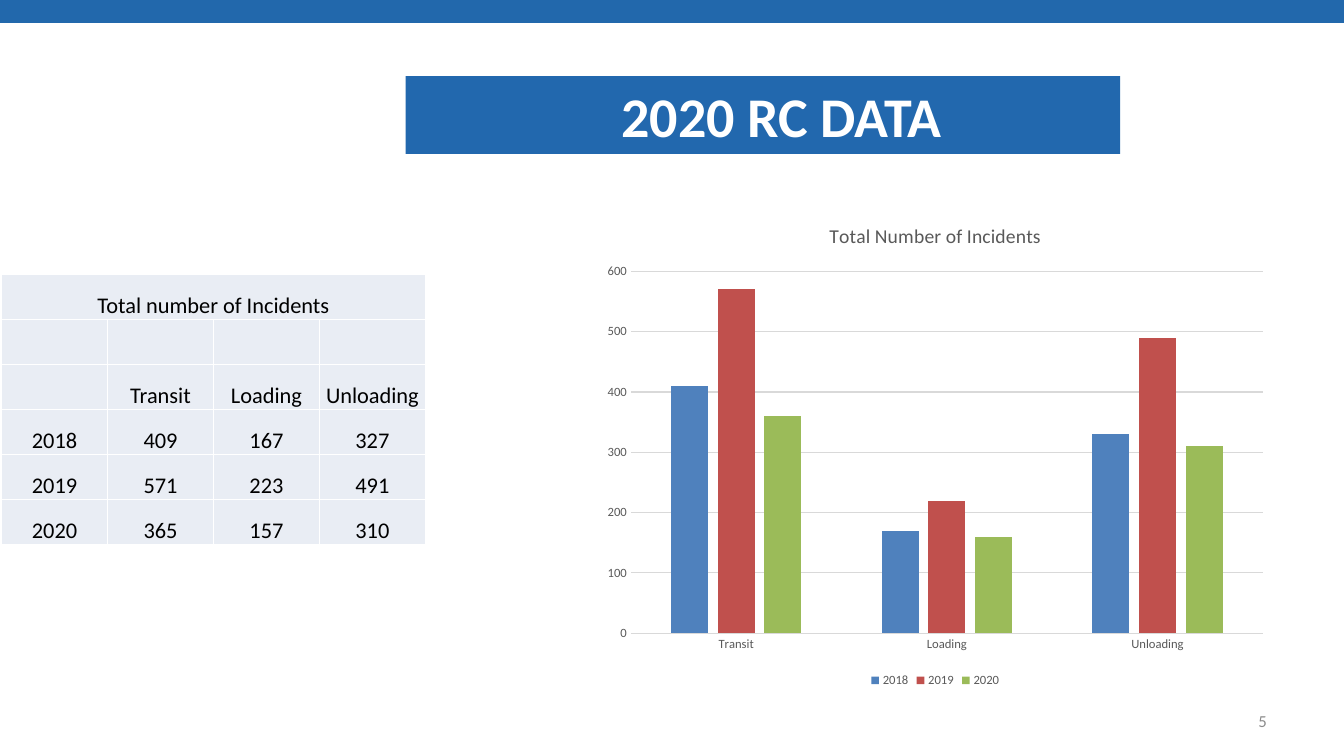
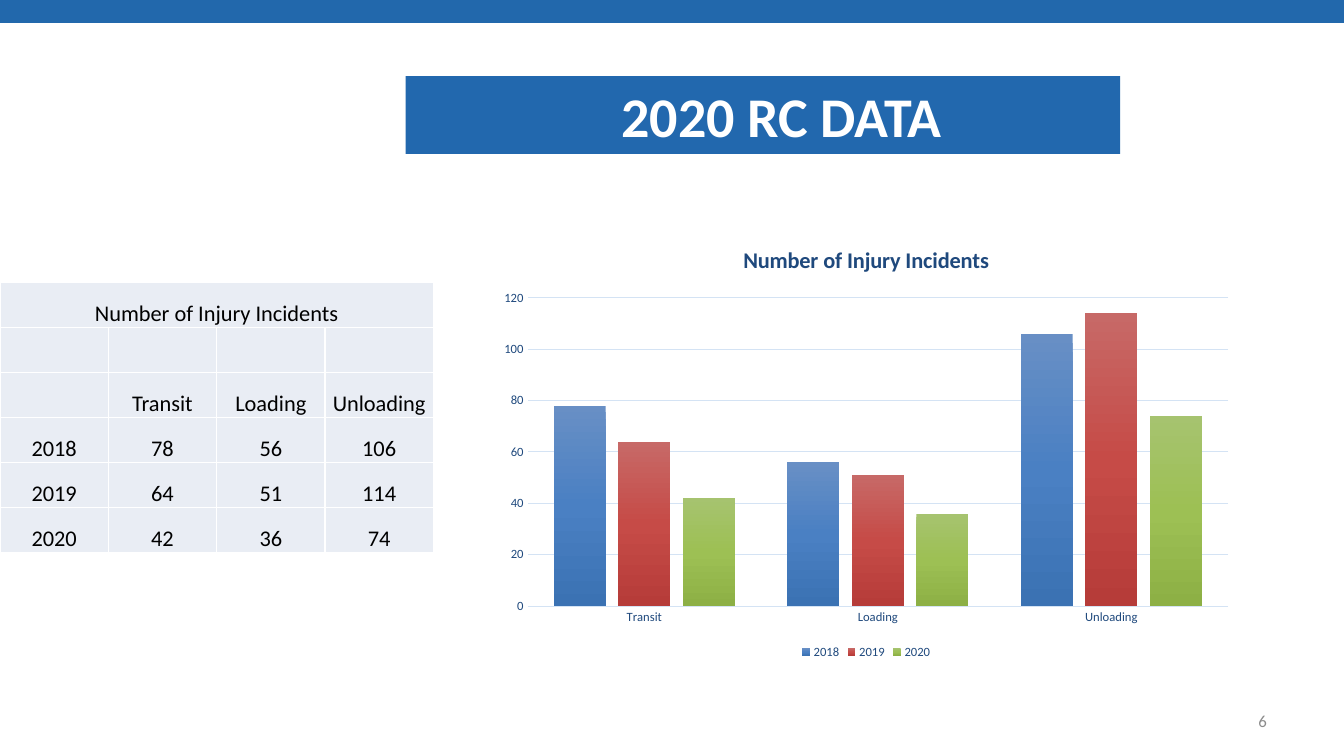
"""Build the two 2020 RC incident slides, each with a table and a column chart."""
from copy import deepcopy
from dataclasses import dataclass
from typing import Any

from lxml.etree import SubElement
from pptx import Presentation
from pptx.chart.data import CategoryChartData
from pptx.chart.series import BarSeries
from pptx.dml.color import RGBColor
from pptx.enum.chart import XL_CHART_TYPE, XL_LEGEND_POSITION, XL_TICK_MARK
from pptx.enum.shapes import MSO_SHAPE
from pptx.enum.text import MSO_ANCHOR, PP_ALIGN
from pptx.oxml.ns import qn
from pptx.slide import Slide
from pptx.table import _Cell
from pptx.text.text import Font, TextFrame
from pptx.util import Cm, Pt


@dataclass(frozen=True)
class Theme:
    font: str = "Calibri"
    band: str = "2268AC"
    title_fill: str = "2268AE"
    white: str = "FFFFFF"
    black: str = "000000"
    cell: str = "E9EDF4"
    number: str = "8C8C8C"
    title_size: int = 40
    table_size: int = 16
    number_size: int = 12
    axis_size: int = 9


@dataclass(frozen=True)
class Box:
    left: float
    top: float
    width: float
    height: float

    def emu(self) -> tuple[int, int, int, int]:
        return Cm(self.left), Cm(self.top), Cm(self.width), Cm(self.height)


@dataclass(frozen=True)
class ChartStyle:
    text: str
    grid: str
    title_size: int
    title_bold: bool
    gap: int
    overlap: int
    maximum: int
    unit: int
    digits: int
    fills: tuple[tuple[str, ...], ...]


@dataclass(frozen=True)
class Page:
    number: int
    table_title: str
    chart_title: str
    values: dict[str, tuple[int, ...]]
    table_box: Box
    chart_box: Box
    style: ChartStyle


THEME = Theme()
SLIDE = Box(0, 0, 33.87, 19.05)
BAND = Box(0, 0, SLIDE.width, 0.58)
HEADER = Box(0, 0.69, SLIDE.width, 3.33)
TITLE = Box(10.22, 1.92, 18.01, 1.96)
NUMBER = Box(24.28, 17.65, 7.9, 1.02)
STAGES = ("Transit", "Loading", "Unloading")

PAGES = (
    Page(
        5, "Total number of Incidents", "Total Number of Incidents",
        {"2018": (409, 167, 327), "2019": (571, 223, 491), "2020": (365, 157, 310)},
        Box(0.04, 6.92, 10.68, 6.81), Box(14.97, 5.12, 17.2, 12.31),
        ChartStyle("595959", "D9D9D9", 14, False, 219, -27, 600, 100, -1,
                   (("4F81BD",), ("C0504D",), ("9BBB59",))),
    ),
    Page(
        6, "Number of Injury Incidents", "Number of Injury Incidents",
        {"2018": (78, 56, 106), "2019": (64, 51, 114), "2020": (42, 36, 74)},
        Box(0, 7.12, 10.92, 6.81), Box(12.33, 5.72, 19, 11),
        ChartStyle("1F497D", "D4E3F4", 16, True, 100, -24, 120, 20, 0,
                   (("688FC5", "4A80C3", "3B72B3"),
                    ("C76967", "C64B47", "B63C39"),
                    ("A6C36F", "9DC054", "8DB045"))),
    ),
)


def rgb(color: str) -> RGBColor:
    return RGBColor.from_string(color)


def apply(obj: Any, values: dict[str, Any]) -> None:
    for name, value in values.items():
        setattr(obj, name, value)


def set_font(font: Font, size: int, color: str, bold: bool = False) -> None:
    apply(font, {"name": THEME.font, "size": Pt(size), "bold": bold})
    font.color.rgb = rgb(color)


def write(tf: TextFrame, text: str, size: int, color: str,
          align: PP_ALIGN = PP_ALIGN.CENTER, bold: bool = False) -> None:
    p = tf.paragraphs[0]
    p.alignment = align
    r = p.add_run()
    r.text = text
    set_font(r.font, size, color, bold)


def add_rect(s: Slide, box: Box, color: str) -> TextFrame:
    sp = s.shapes.add_shape(MSO_SHAPE.RECTANGLE, *box.emu())
    sp.shadow.inherit = False
    sp.fill.solid()
    sp.fill.fore_color.rgb = rgb(color)
    sp.line.fill.background()
    return sp.text_frame


def add_frame(s: Slide, number: int) -> None:
    add_rect(s, BAND, THEME.band)
    add_rect(s, HEADER, THEME.white)
    tf = add_rect(s, TITLE, THEME.title_fill)
    apply(tf, {"word_wrap": True, "vertical_anchor": MSO_ANCHOR.TOP,
               "margin_left": Cm(1.19), "margin_right": Cm(0.25)})
    write(tf, "2020 RC DATA", THEME.title_size, THEME.white, bold=True)
    tf = s.shapes.add_textbox(*NUMBER.emu()).text_frame
    apply(tf, {"word_wrap": True, "vertical_anchor": MSO_ANCHOR.MIDDLE})
    write(tf, str(number), THEME.number_size, THEME.number, PP_ALIGN.RIGHT)


def set_borders(cell: _Cell) -> None:
    props = cell._tc.get_or_add_tcPr()
    for i, side in enumerate(("lnL", "lnR", "lnT", "lnB")):
        ln = props.makeelement(qn(f"a:{side}"), {"w": str(Pt(1))})
        fill = SubElement(ln, qn("a:solidFill"))
        SubElement(fill, qn("a:srgbClr"), val=THEME.white)
        props.insert(i, ln)


def add_table(s: Slide, page: Page) -> None:
    rows = [(page.table_title, "", "", ""), ("",) * 4, ("", *STAGES)]
    rows += [(year, *map(str, counts)) for year, counts in page.values.items()]
    box = page.table_box
    table = s.shapes.add_table(len(rows), len(rows[0]), *box.emu()).table
    apply(table, {"first_row": False, "horz_banding": False})
    for column in table.columns:
        column.width = Cm(box.width / len(rows[0]))
    for row, texts in zip(table.rows, rows):
        row.height = Cm(box.height / len(rows))
        for cell, text in zip(row.cells, texts):
            apply(cell, {"vertical_anchor": MSO_ANCHOR.BOTTOM, "margin_left": Cm(0.03),
                         "margin_right": Cm(0.03), "margin_top": Cm(0.03),
                         "margin_bottom": 0})
            cell.fill.solid()
            cell.fill.fore_color.rgb = rgb(THEME.cell)
            set_borders(cell)
            if text:
                write(cell.text_frame, text, THEME.table_size, THEME.black)
    table.cell(0, 0).merge(table.cell(0, len(rows[0]) - 1))


def fill_series(series: BarSeries, colors: tuple[str, ...]) -> None:
    fill = series.format.fill
    if len(colors) == 1:
        fill.solid()
        fill.fore_color.rgb = rgb(colors[0])
        return
    fill.gradient()
    fill.gradient_angle = 270
    stops = series._element.find(f".//{qn('a:gsLst')}")
    while len(stops) < len(colors):
        stops.append(deepcopy(stops[0]))
    for i, (stop, color) in enumerate(zip(fill.gradient_stops, colors)):
        stop.position = i / (len(colors) - 1)
        stop.color.rgb = rgb(color)


def add_chart(s: Slide, page: Page) -> None:
    style = page.style
    data = CategoryChartData()
    data.categories = STAGES
    for year, counts in page.values.items():
        data.add_series(year, [round(count, style.digits) for count in counts])
    chart = s.shapes.add_chart(
        XL_CHART_TYPE.COLUMN_CLUSTERED, *page.chart_box.emu(), data).chart
    set_font(chart.font, THEME.axis_size, style.text)

    chart.has_title = True
    chart.chart_title.include_in_layout = False
    write(chart.chart_title.text_frame, page.chart_title, style.title_size,
          style.text, bold=style.title_bold)
    chart.has_legend = True
    apply(chart.legend, {"position": XL_LEGEND_POSITION.BOTTOM,
                         "include_in_layout": False})

    cat, val = chart.category_axis, chart.value_axis
    apply(val, {"minimum_scale": 0, "maximum_scale": style.maximum,
                "major_unit": style.unit, "has_major_gridlines": True})
    for axis in (cat, val):
        apply(axis, {"major_tick_mark": XL_TICK_MARK.NONE,
                     "minor_tick_mark": XL_TICK_MARK.NONE})
        set_font(axis.tick_labels.font, THEME.axis_size, style.text)
    for line in (cat.format.line, val.major_gridlines.format.line):
        line.width = Pt(0.75)
        line.color.rgb = rgb(style.grid)
    val.format.line.fill.background()

    plot = chart.plots[0]
    apply(plot, {"gap_width": style.gap, "overlap": style.overlap,
                 "vary_by_categories": False})
    for series, colors in zip(plot.series, style.fills):
        fill_series(series, colors)


def main() -> None:
    prs = Presentation()
    apply(prs, {"slide_width": Cm(SLIDE.width), "slide_height": Cm(SLIDE.height)})
    for page in PAGES:
        s = prs.slides.add_slide(prs.slide_layouts[6])
        add_frame(s, page.number)
        add_table(s, page)
        add_chart(s, page)
    prs.save("out.pptx")


if __name__ == "__main__":
    main()
